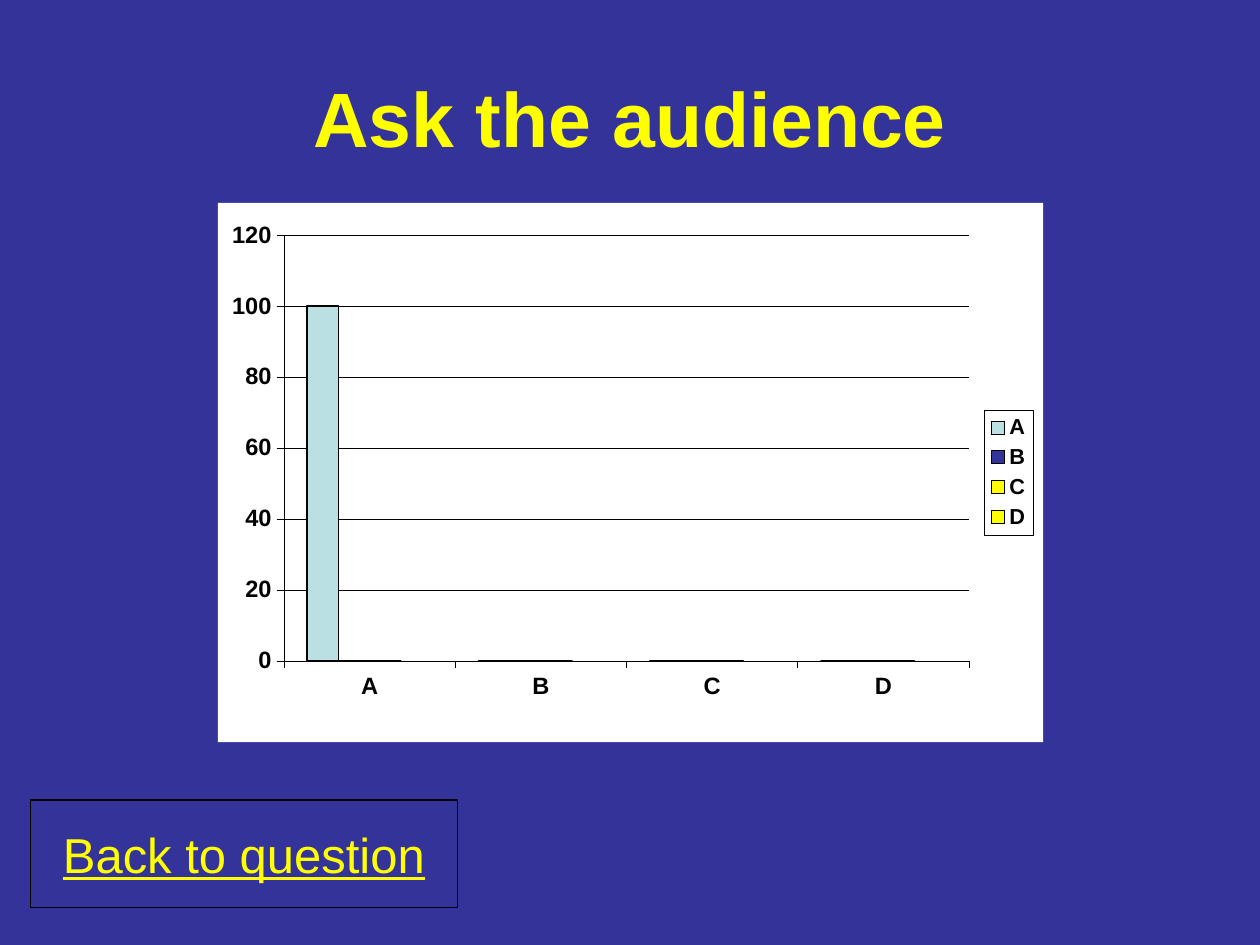
from dataclasses import dataclass
from typing import Optional

from lxml.etree import fromstring
from pptx import Presentation
from pptx.chart.data import CategoryChartData
from pptx.dml.color import RGBColor as RGB
from pptx.enum.chart import (
    XL_CHART_TYPE as ChartType,
    XL_LEGEND_POSITION as LegendPos,
    XL_TICK_LABEL_POSITION as LabelPos,
    XL_TICK_MARK as TickMark,
)
from pptx.enum.shapes import MSO_SHAPE as Preset
from pptx.enum.text import MSO_ANCHOR as Anchor, PP_ALIGN as Align
from pptx.util import Inches, Pt

CHART_NS = "http://schemas.openxmlformats.org/drawingml/2006/chart"
DRAWING_NS = "http://schemas.openxmlformats.org/drawingml/2006/main"


@dataclass(frozen=True)
class Theme:
    font: str = "Arial"
    background: RGB = RGB(0x33, 0x33, 0x99)
    accent: RGB = RGB(0xFF, 0xFF, 0x00)
    ink: RGB = RGB(0, 0, 0)
    panel: RGB = RGB(0xFF, 0xFF, 0xFF)
    pale: RGB = RGB(0xBB, 0xE0, 0xE3)
    title_size: float = 44
    button_size: float = 28
    axis_size: float = 13.5
    legend_size: float = 12.4
    hairline: float = 0.25
    button_line: float = 0.75
    bar_line: float = 1


@dataclass(frozen=True)
class Answer:
    name: str
    votes: tuple[Optional[int], ...]
    color: RGB


@dataclass(frozen=True)
class Box:
    left: float
    top: float
    width: float
    height: float

    def lengths(self) -> tuple:
        return tuple(map(Inches, (self.left, self.top, self.width, self.height)))


THEME = Theme()
ANSWERS = (
    Answer("A", (100, 0, 0, 0), THEME.pale),
    Answer("B", (0, 0, 0, 0), THEME.background),
    Answer("C", (0, 0, 0, 0), THEME.accent),
    Answer("D", (None,) * 4, THEME.accent),
)


def style_font(font, size: float, color: RGB, bold: bool = False) -> None:
    font.name, font.size, font.bold = THEME.font, Pt(size), bold
    font.color.rgb = color


def style_line(line, width: float) -> None:
    line.color.rgb = THEME.ink
    line.width = Pt(width)


def write_centred(frame, text: str, size: float, bold: bool = False):
    frame.vertical_anchor = Anchor.MIDDLE
    paragraph = frame.paragraphs[0]
    paragraph.alignment = Align.CENTER
    run = paragraph.add_run()
    run.text = text
    style_font(run.font, size, THEME.accent, bold)
    return run


def add_title(slide, text: str, box: Box) -> None:
    title = slide.shapes.title
    title.left, title.top, title.width, title.height = box.lengths()
    write_centred(title.text_frame, text, THEME.title_size, bold=True)


def set_panel_fill(chart) -> None:
    panel = fromstring(
        f'<c:spPr xmlns:c="{CHART_NS}" xmlns:a="{DRAWING_NS}">'
        f'<a:solidFill><a:srgbClr val="{THEME.panel}"/></a:solidFill>'
        "<a:ln><a:noFill/></a:ln></c:spPr>"
    )
    chart.element.find(f"{{{CHART_NS}}}chart").addnext(panel)


def place_plot(chart, area: Box) -> None:
    """Place the inner plot area, in fractions of the chart."""
    values = (
        ("layoutTarget", "inner"), ("xMode", "edge"), ("yMode", "edge"),
        ("x", area.left), ("y", area.top), ("w", area.width), ("h", area.height),
    )
    entries = "".join(f'<c:{tag} val="{value}"/>' for tag, value in values)
    layout = fromstring(
        f'<c:layout xmlns:c="{CHART_NS}"><c:manualLayout>{entries}'
        "</c:manualLayout></c:layout>"
    )
    plot_area = next(chart.element.iter(f"{{{CHART_NS}}}plotArea"))
    for automatic in plot_area.findall(f"{{{CHART_NS}}}layout"):
        plot_area.remove(automatic)
    plot_area.insert(0, layout)


def add_vote_chart(slide, box: Box, plot_area: Box) -> None:
    votes = CategoryChartData()
    votes.categories = [answer.name for answer in ANSWERS]
    for answer in ANSWERS:
        votes.add_series(answer.name, answer.votes)
    chart = slide.shapes.add_chart(
        ChartType.COLUMN_CLUSTERED, *box.lengths(), votes
    ).chart
    chart.has_title = False
    style_font(chart.font, THEME.axis_size, THEME.ink, bold=True)
    set_panel_fill(chart)
    place_plot(chart, plot_area)

    # Bars
    plot = chart.plots[0]
    plot.gap_width, plot.overlap, plot.vary_by_categories = 150, 0, False
    for series, answer in zip(plot.series, ANSWERS):
        series.format.fill.solid()
        series.format.fill.fore_color.rgb = answer.color
        style_line(series.format.line, THEME.bar_line)

    # Axes
    for axis in (chart.category_axis, chart.value_axis):
        axis.major_tick_mark = TickMark.OUTSIDE
        axis.minor_tick_mark = TickMark.NONE
        style_font(axis.tick_labels.font, THEME.axis_size, THEME.ink, bold=True)
        style_line(axis.format.line, THEME.hairline)
    chart.category_axis.tick_label_position = LabelPos.LOW
    scale = chart.value_axis
    scale.minimum_scale, scale.maximum_scale, scale.major_unit = 0, 120, 20
    scale.has_major_gridlines = True
    style_line(scale.major_gridlines.format.line, THEME.hairline)

    # Legend with a thin frame
    chart.has_legend = True
    legend = chart.legend
    legend.position, legend.include_in_layout = LegendPos.RIGHT, False
    style_font(legend.font, THEME.legend_size, THEME.ink, bold=True)
    frame = fromstring(
        f'<c:spPr xmlns:c="{CHART_NS}" xmlns:a="{DRAWING_NS}">'
        f'<a:ln w="{Pt(THEME.hairline)}"><a:solidFill>'
        f'<a:srgbClr val="{THEME.ink}"/></a:solidFill></a:ln></c:spPr>'
    )
    legend.font  # text properties follow the frame in the legend
    legend._element.find(f"{{{CHART_NS}}}txPr").addprevious(frame)


def add_back_button(slide, text: str, box: Box) -> None:
    button = slide.shapes.add_shape(Preset.RECTANGLE, *box.lengths())
    button.shadow.inherit = False
    button.fill.background()
    style_line(button.line, THEME.button_line)
    button.text_frame.word_wrap = False
    label = write_centred(button.text_frame, text, THEME.button_size)
    label.font.underline = True


def main() -> None:
    deck = Presentation()
    deck.slide_width, deck.slide_height = Inches(10), Inches(7.5)
    slide = deck.slides.add_slide(deck.slide_layouts[5])
    slide.background.fill.solid()
    slide.background.fill.fore_color.rgb = THEME.background

    add_title(slide, "Ask the audience", Box(0.5, 0.3, 9, 1.25))
    add_vote_chart(slide, Box(1.73, 1.61, 6.55, 4.28), Box(0.08, 0.06, 0.83, 0.79))
    add_back_button(slide, "Back to question", Box(0.24, 6.35, 3.39, 0.85))
    deck.save("out.pptx")


if __name__ == "__main__":
    main()
